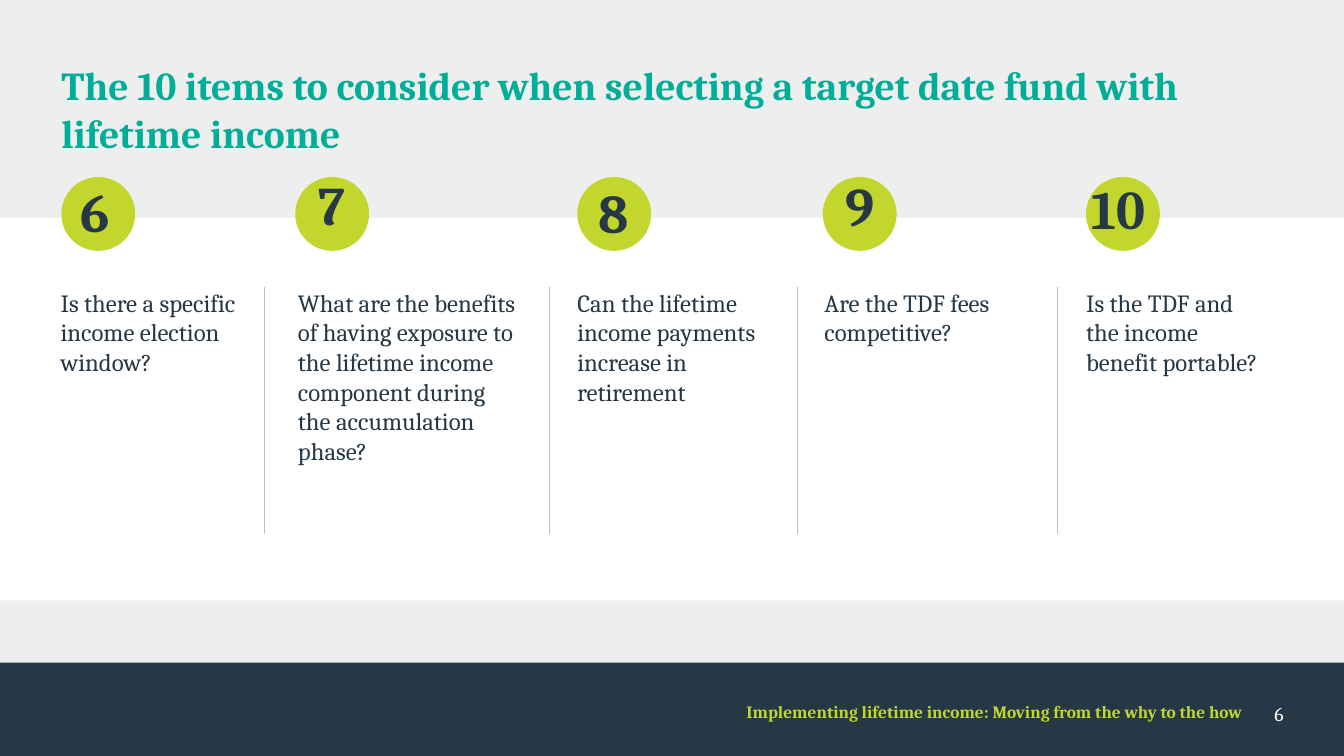
from lxml import etree
from pptx import Presentation
from pptx.dml.color import RGBColor
from pptx.enum import shapes, text
from pptx.oxml import ns
from pptx.util import Pt

TITLE = "The 10 items to consider when selecting a target date fund with lifetime income"
FOOTER = "Implementing lifetime income: Moving from the why to the how"
PAGE = "6"

# number, number left, number top, circle left, question left, question width, question
ITEMS = [
    ("6", 64.8, 144, 49.7, 49, 142.6, "Is there a specific income election window?"),
    ("7", 257.8, 138.2, 239, 241.2, 182.2,
     "What are the benefits of having exposure to the lifetime income component "
     "during the accumulation phase?"),
    ("8", 484.6, 144.7, 467.3, 467.3, 167,
     "Can the lifetime income payments increase in retirement"),
    ("9", 684.7, 139.7, 666, 667.4, 163.4, "Are the TDF fees competitive?"),
    ("10", 883.4, 141.8, 879.1, 879.1, 147.6,
     "Is the TDF and the income benefit portable?"),
]
DIVIDERS = [213.8, 445, 645.8, 856.1]

WIDTH, HEIGHT = 1087.9, 612
MARGIN = 49.7
BAND_TOP, BAND_HEIGHT = 176.4, 309.6
FOOTER_TOP, FOOTER_TEXT_TOP = 536.4, 568
CIRCLE_TOP, CIRCLE_SIZE = 143.3, 59.8
NUMBER_HEIGHT, DIGIT_WIDTH, TWO_DIGIT_WIDTH = 66, 39, 53.3
QUESTION_TOP, QUESTION_HEIGHT, DIVIDER_BOTTOM = 232.6, 190, 432

FONT = "Cambria"
PALE = RGBColor(0xED, 0xEE, 0xEE)
NAVY = RGBColor(0x26, 0x37, 0x46)
LIME = RGBColor(0xC3, 0xD6, 0x2E)
TEAL = RGBColor(0x00, 0xAD, 0x97)
GREY = RGBColor(0xBF, 0xBF, 0xBF)
WHITE = RGBColor(0xFF, 0xFF, 0xFF)


def add_filled(slide, kind, left, top, width, height, color):
    shape = slide.shapes.add_shape(kind, Pt(left), Pt(top), Pt(width), Pt(height))
    shape.shadow.inherit = False
    shape.fill.solid()
    shape.fill.fore_color.rgb = color
    shape.line.fill.background()


def add_text(slide, words, left, top, width, height, size, color, bold=False,
             align=text.PP_ALIGN.LEFT):
    box = slide.shapes.add_textbox(Pt(left), Pt(top), Pt(width), Pt(height))
    frame = box.text_frame
    frame.word_wrap = True
    frame.margin_left = frame.margin_right = frame.margin_top = frame.margin_bottom = 0
    frame.text = words
    paragraph = frame.paragraphs[0]
    paragraph.alignment = align
    font = paragraph.runs[0].font
    font.name, font.size, font.bold = FONT, Pt(size), bold
    font.color.rgb = color


def add_divider(slide, x):
    line = slide.shapes.add_connector(
        shapes.MSO_CONNECTOR.STRAIGHT, Pt(x), Pt(QUESTION_TOP), Pt(x), Pt(DIVIDER_BOTTOM))
    line.line.color.rgb = GREY
    line.line.width = Pt(1)
    etree.SubElement(line._element.spPr, ns.qn("a:effectLst"))


def main():
    deck = Presentation()
    deck.slide_width, deck.slide_height = Pt(WIDTH), Pt(HEIGHT)
    slide = deck.slides.add_slide(deck.slide_layouts[6])
    slide.background.fill.solid()
    slide.background.fill.fore_color.rgb = PALE

    rectangle, oval = shapes.MSO_SHAPE.RECTANGLE, shapes.MSO_SHAPE.OVAL
    right = text.PP_ALIGN.RIGHT
    add_filled(slide, rectangle, 0, FOOTER_TOP, WIDTH, HEIGHT - FOOTER_TOP, NAVY)
    add_text(slide, PAGE, 1010.2, FOOTER_TEXT_TOP, 28.8, 23.8, 16, WHITE, align=right)
    add_text(slide, FOOTER, 406, FOOTER_TEXT_TOP, 599.8, 20.9, 14, LIME, True, right)
    add_text(slide, TITLE, MARGIN, MARGIN, 989.3, 81.4, 32, TEAL, True)
    add_filled(slide, rectangle, 0, BAND_TOP, WIDTH, BAND_HEIGHT, WHITE)

    for number, number_x, number_y, circle_x, question_x, width, question in ITEMS:
        add_filled(slide, oval, circle_x, CIRCLE_TOP, CIRCLE_SIZE, CIRCLE_SIZE, LIME)
        number_width = DIGIT_WIDTH if len(number) == 1 else TWO_DIGIT_WIDTH
        add_text(slide, number, number_x, number_y, number_width, NUMBER_HEIGHT,
                 44, NAVY, True)
        add_text(slide, question, question_x, QUESTION_TOP, width, QUESTION_HEIGHT,
                 20, NAVY)

    for x in DIVIDERS:
        add_divider(slide, x)

    deck.save("out.pptx")


if __name__ == "__main__":
    main()
